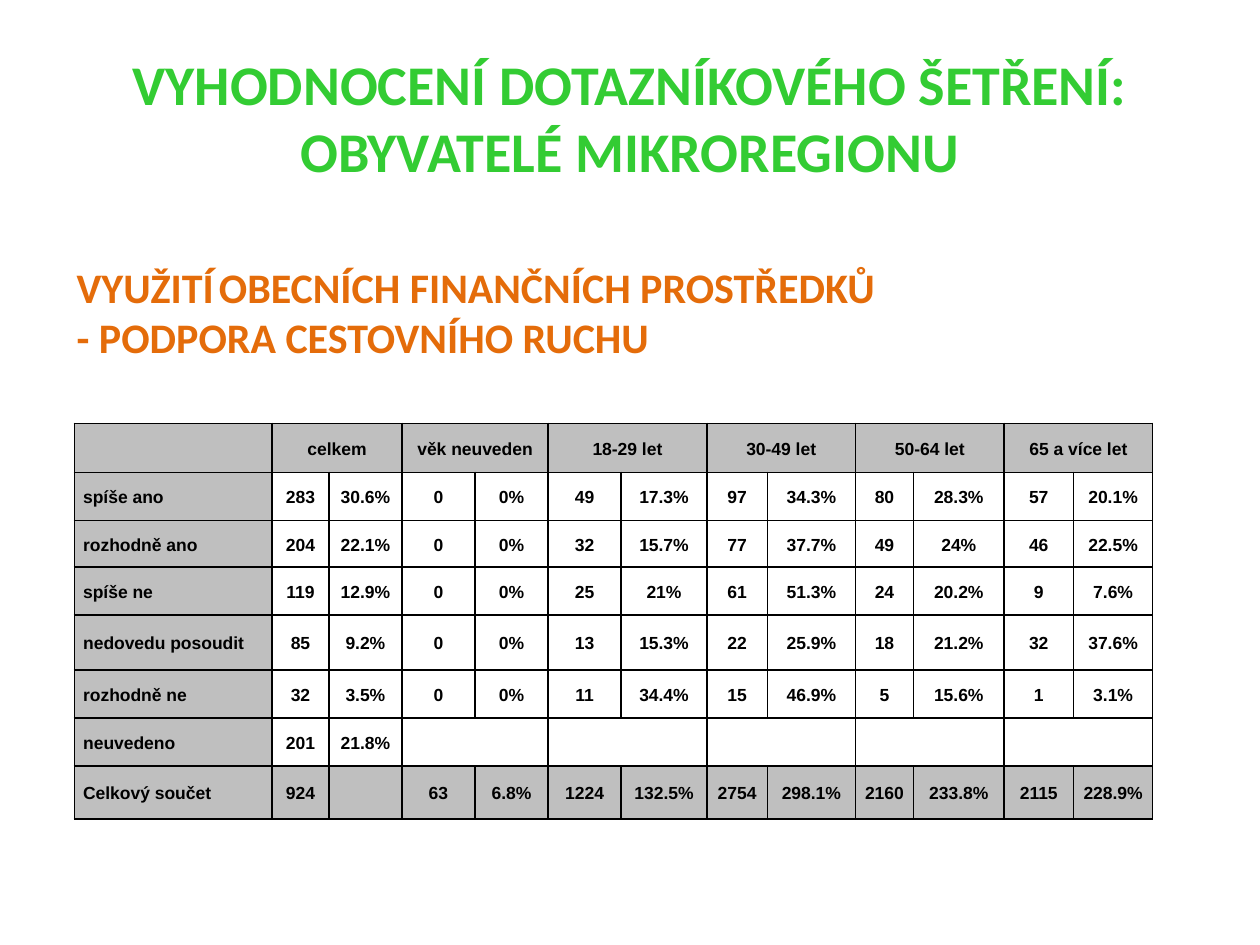
from lxml.etree import SubElement
from pptx import Presentation
from pptx.dml.color import RGBColor
from pptx.enum.text import MSO_ANCHOR, PP_ALIGN
from pptx.oxml import parse_xml
from pptx.oxml.ns import nsdecls, qn
from pptx.util import Inches, Pt

GREEN = RGBColor(0x33, 0xCC, 0x33)
ORANGE = RGBColor(0xE4, 0x6C, 0x0A)
BROWN = RGBColor(0xAA, 0x42, 0x14)
GREY = RGBColor(0xBF, 0xBF, 0xBF)
BLACK = RGBColor(0, 0, 0)


def add_run(paragraph, text, size, font, color, outlined=False):
    run = paragraph.add_run()
    run.text = text
    run.font.size = Pt(size)
    run.font.name = font
    run.font.bold = True
    run.font.color.rgb = color
    if outlined:
        outline = parse_xml(
            f'<a:ln {nsdecls("a")} w="{Pt(0.71)}"><a:solidFill>'
            f'<a:srgbClr val="{BROWN}"/></a:solidFill></a:ln>'
        )
        run.font._element.insert(0, outline)


def add_text_frame(slide, left, top, width, height):
    shape = slide.shapes.add_textbox(Inches(left), Inches(top), Inches(width), Inches(height))
    shape.text_frame.word_wrap = True
    shape.text_frame.vertical_anchor = MSO_ANCHOR.MIDDLE
    return shape.text_frame


presentation = Presentation()
presentation.slide_width = Inches(10)
presentation.slide_height = Inches(7.5)
slide = presentation.slides.add_slide(presentation.slide_layouts[6])

title = add_text_frame(slide, 0.5, 0.3, 9, 1.25).paragraphs[0]
title.alignment = PP_ALIGN.CENTER
add_run(title, "VYHODNOCENÍ DOTAZNÍKOVÉHO ŠETŘENÍ:", 32, "Calibri", GREEN, True)
title.add_line_break()
add_run(title, "OBYVATELÉ MIKROREGIONU", 32, "Calibri", GREEN, True)

subtitle_frame = add_text_frame(slide, 0.51, 2.02, 8.62, 0.91)
topic = subtitle_frame.paragraphs[0]
add_run(topic, "VYUŽITÍ", 24, "Calibri", ORANGE, True)
add_run(topic, " ", 10, "Arial", BLACK)
add_run(topic, "OBECNÍCH FINANČNÍCH PROSTŘEDKŮ", 24, "Calibri", ORANGE, True)
subtopic = subtitle_frame.add_paragraph()
add_run(subtopic, "- PODPORA CESTOVNÍHO RUCHU", 24, "Calibri", ORANGE, True)

column_widths = [1.57, 0.45, 0.58, 0.58, 0.58, 0.58, 0.68, 0.48, 0.7, 0.46, 0.72, 0.55, 0.63]
row_heights = [0.39, 0.38, 0.37, 0.38, 0.44, 0.38, 0.38, 0.42]
answers = [
    ["", "celkem", "", "věk neuveden", "", "18-29 let", "", "30-49 let", "",
     "50-64 let", "", "65 a více let", ""],
    ["spíše ano", "283", "30.6%", "0", "0%", "49", "17.3%", "97", "34.3%",
     "80", "28.3%", "57", "20.1%"],
    ["rozhodně ano", "204", "22.1%", "0", "0%", "32", "15.7%", "77", "37.7%",
     "49", "24%", "46", "22.5%"],
    ["spíše ne", "119", "12.9%", "0", "0%", "25", "21%", "61", "51.3%",
     "24", "20.2%", "9", "7.6%"],
    ["nedovedu posoudit", "85", "9.2%", "0", "0%", "13", "15.3%", "22", "25.9%",
     "18", "21.2%", "32", "37.6%"],
    ["rozhodně ne", "32", "3.5%", "0", "0%", "11", "34.4%", "15", "46.9%",
     "5", "15.6%", "1", "3.1%"],
    ["neuvedeno", "201", "21.8%"] + [""] * 10,
    ["Celkový součet", "924", "", "63", "6.8%", "1224", "132.5%", "2754", "298.1%",
     "2160", "233.8%", "2115", "228.9%"],
]
header_row, unstated_row, total_row = 0, 6, 7

table = slide.shapes.add_table(
    len(row_heights), len(column_widths), Inches(0.59), Inches(3.36), Inches(8.58), Inches(3.15)
).table
table.first_row = False
table.horz_banding = False
for column, width in zip(table.columns, column_widths):
    column.width = Inches(width)
for row, height in zip(table.rows, row_heights):
    row.height = Inches(height)

for row_index, values in enumerate(answers):
    for column_index, value in enumerate(values):
        cell = table.cell(row_index, column_index)
        cell.vertical_anchor = MSO_ANCHOR.MIDDLE
        cell.margin_left = cell.margin_right = Inches(0.07)
        cell.margin_top = cell.margin_bottom = 0
        for side in ("a:lnL", "a:lnR", "a:lnT", "a:lnB"):
            border = SubElement(cell._tc.get_or_add_tcPr(), qn(side), w=str(Pt(1)))
            SubElement(SubElement(border, qn("a:solidFill")), qn("a:srgbClr"), val=str(BLACK))
        if column_index == 0 or row_index in (header_row, total_row):
            cell.fill.solid()
            cell.fill.fore_color.rgb = GREY
        else:
            cell.fill.background()
        if value:
            paragraph = cell.text_frame.paragraphs[0]
            paragraph.alignment = PP_ALIGN.CENTER if column_index else PP_ALIGN.LEFT
            paragraph.line_spacing = 1.15
            add_run(paragraph, value, 10, "Arial", BLACK)

for row_index, first_column in ((header_row, 1), (unstated_row, 3)):
    for column_index in range(first_column, len(column_widths), 2):
        table.cell(row_index, column_index).merge(table.cell(row_index, column_index + 1))

presentation.save("out.pptx")
